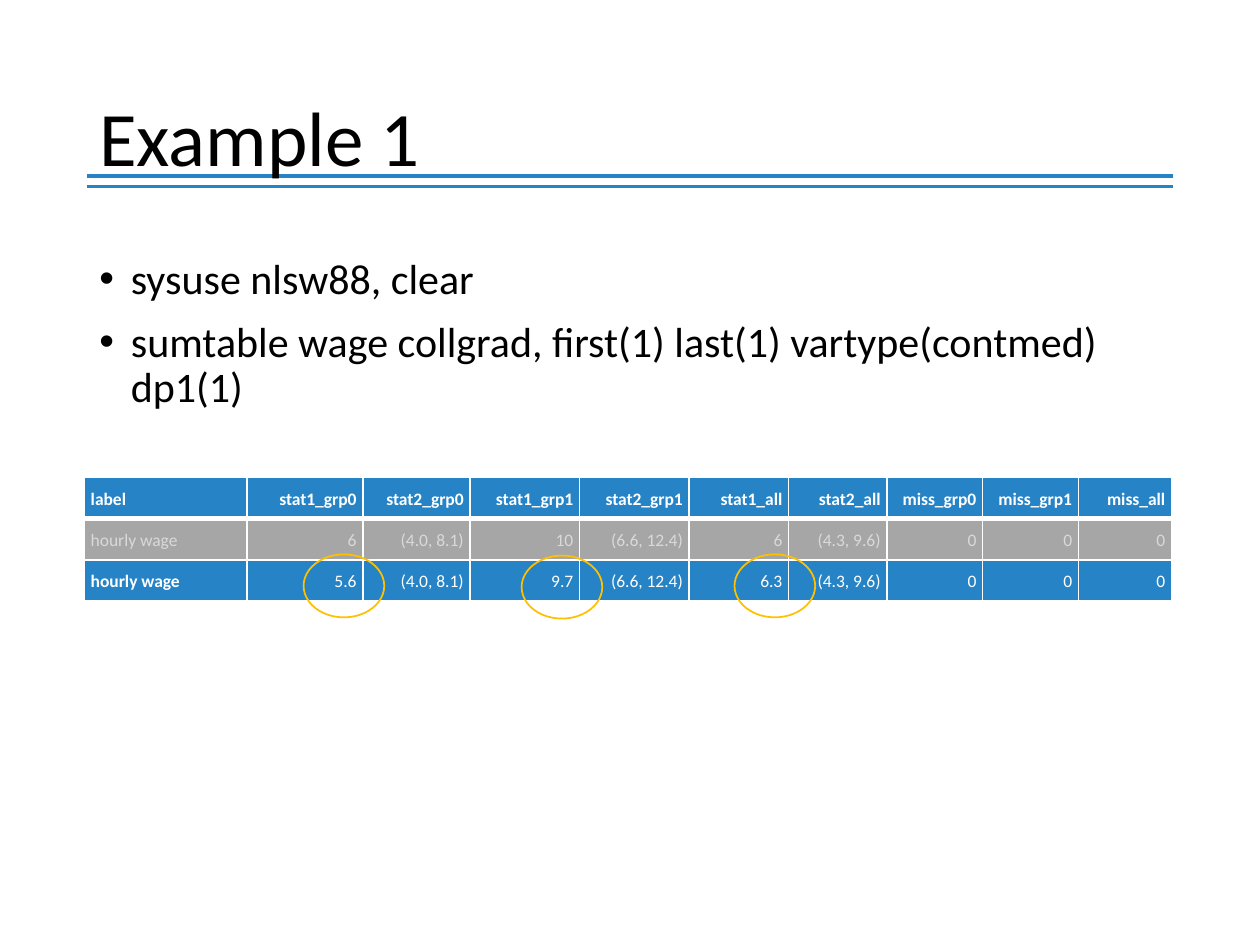
import pptx
import pptx.dml.color
import pptx.enum.shapes
import pptx.enum.text
import pptx.oxml
import pptx.oxml.ns
import pptx.util
from dataclasses import dataclass

Inches = pptx.util.Inches
Pt = pptx.util.Pt
Align = pptx.enum.text.PP_ALIGN
Anchor = pptx.enum.text.MSO_ANCHOR


@dataclass(frozen=True)
class Theme:
    font: str = "Calibri"
    ink: str = "000000"
    blue: str = "2683C6"
    grey: str = "A6A6A6"
    pale: str = "D9D9D9"
    white: str = "FFFFFF"
    gold: str = "FFC000"
    title_size: int = 44
    body_size: int = 24
    table_size: int = 10


THEME = Theme()
TITLE = "Example 1"
COMMANDS = [
    ["sysuse nlsw88, clear"],
    ["sumtable wage collgrad, first(1) last(1) vartype(contmed) ", "dp1(1)"],
]
RESULTS = [
    ["label", "stat1_grp0", "stat2_grp0", "stat1_grp1", "stat2_grp1",
     "stat1_all", "stat2_all", "miss_grp0", "miss_grp1", "miss_all"],
    ["hourly wage", "6", "(4.0, 8.1)", "10", "(6.6, 12.4)", "6", "(4.3, 9.6)", "0", "0", "0"],
    ["hourly wage", "5.6", "(4.0, 8.1)", "9.7", "(6.6, 12.4)", "6.3", "(4.3, 9.6)", "0", "0", "0"],
]
COLUMN_WIDTHS = [1.29, 0.92, 0.85, 0.87, 0.87, 0.79, 0.78, 0.76, 0.76, 0.74]
TABLE_HEIGHT = 0.98
ROW_LOOKS = [(THEME.blue, THEME.white), (THEME.grey, THEME.pale), (THEME.blue, THEME.white)]
RULE_HEIGHTS = [1.4, 1.48]
HIGHLIGHTS = [(2.41, 4.4), (4.14, 4.41), (5.83, 4.4)]


def rgb(value):
    return pptx.dml.color.RGBColor.from_string(value)


def add_span(para, text, size, color, bold=False):
    span = para.add_run()
    span.text = text
    span.font.name = THEME.font
    span.font.size = Pt(size)
    span.font.bold = bold
    span.font.color.rgb = rgb(color)


def add_box(page, left, top, width, height, anchor):
    box = page.shapes.add_textbox(Inches(left), Inches(top), Inches(width), Inches(height))
    box.text_frame.word_wrap = True
    box.text_frame.vertical_anchor = anchor
    return box.text_frame


def add_element(parent, xml):
    namespace = pptx.oxml.ns.nsdecls("a")
    element = pptx.oxml.parse_xml(xml.replace("/>", f" {namespace}/>", 1)
                                  if xml.endswith("/>") and xml.count("<") == 1
                                  else xml.replace(">", f" {namespace}>", 1))
    parent.append(element)


def add_rules(page):
    for height in RULE_HEIGHTS:
        rule = page.shapes.add_connector(
            pptx.enum.shapes.MSO_CONNECTOR.STRAIGHT,
            Inches(0.69), Inches(height), Inches(9.31), Inches(height))
        rule.line.color.rgb = rgb(THEME.blue)
        rule.line.width = Pt(2.25)
        add_element(rule.element.spPr, "<a:effectLst/>")


def add_title(page):
    para = add_box(page, 0.69, 0.4, 8.62, 1.45, Anchor.MIDDLE).paragraphs[0]
    para.line_spacing = 0.9
    add_span(para, TITLE, THEME.title_size, THEME.ink)


def add_commands(page):
    frame = add_box(page, 0.69, 2, 8.99, 4.76, Anchor.TOP)
    for index, parts in enumerate(COMMANDS):
        para = frame.add_paragraph() if index else frame.paragraphs[0]
        props = para._p.get_or_add_pPr()
        props.set("marL", str(Inches(0.25)))
        props.set("indent", str(-Inches(0.25)))
        add_element(props, '<a:buFont typeface="Arial"/>')
        add_element(props, '<a:buChar char="•"/>')
        para.line_spacing = 0.9
        if index:
            para.space_before = Pt(10)
        for part in parts:
            add_span(para, part, THEME.body_size, THEME.ink)


def set_borders(cell, row):
    widths = {"L": 1, "R": 1, "T": 3 if row == 1 else 1, "B": 3 if row == 0 else 1}
    props = cell._tc.get_or_add_tcPr()
    for side, width in widths.items():
        add_element(props, f'<a:ln{side} w="{Pt(width)}"><a:solidFill>'
                           f'<a:srgbClr val="{THEME.white}"/></a:solidFill></a:ln{side}>')


def add_results(page):
    table = page.shapes.add_table(
        len(RESULTS), len(COLUMN_WIDTHS), Inches(0.67), Inches(3.79),
        Inches(sum(COLUMN_WIDTHS)), Inches(TABLE_HEIGHT)).table
    table.horz_banding = False
    for column, width in zip(table.columns, COLUMN_WIDTHS):
        column.width = Inches(width)
    for row, (values, (fill, ink)) in enumerate(zip(RESULTS, ROW_LOOKS)):
        for column, value in enumerate(values):
            cell = table.cell(row, column)
            cell.margin_left = cell.margin_right = Inches(0.05)
            cell.margin_top = cell.margin_bottom = Inches(0.05)
            cell.vertical_anchor = Anchor.MIDDLE
            set_borders(cell, row)
            cell.fill.solid()
            cell.fill.fore_color.rgb = rgb(fill)
            para = cell.text_frame.paragraphs[0]
            para.alignment = Align.RIGHT if column else Align.LEFT
            para.line_spacing = 1.15
            bold = row == 0 or (row == 2 and column == 0)
            add_span(para, value, THEME.table_size, ink, bold)


def add_highlights(page):
    for left, top in HIGHLIGHTS:
        ring = page.shapes.add_shape(
            pptx.enum.shapes.MSO_SHAPE.OVAL,
            Inches(left), Inches(top), Inches(0.64), Inches(0.5))
        ring.shadow.inherit = False
        ring.fill.background()
        ring.line.color.rgb = rgb(THEME.gold)
        ring.line.width = Pt(1)


def main():
    deck = pptx.Presentation()
    deck.slide_width = Inches(10)
    deck.slide_height = Inches(7.5)
    page = deck.slides.add_slide(deck.slide_layouts[6])
    add_rules(page)
    add_title(page)
    add_commands(page)
    add_results(page)
    add_highlights(page)
    deck.save("out.pptx")


if __name__ == "__main__":
    main()
